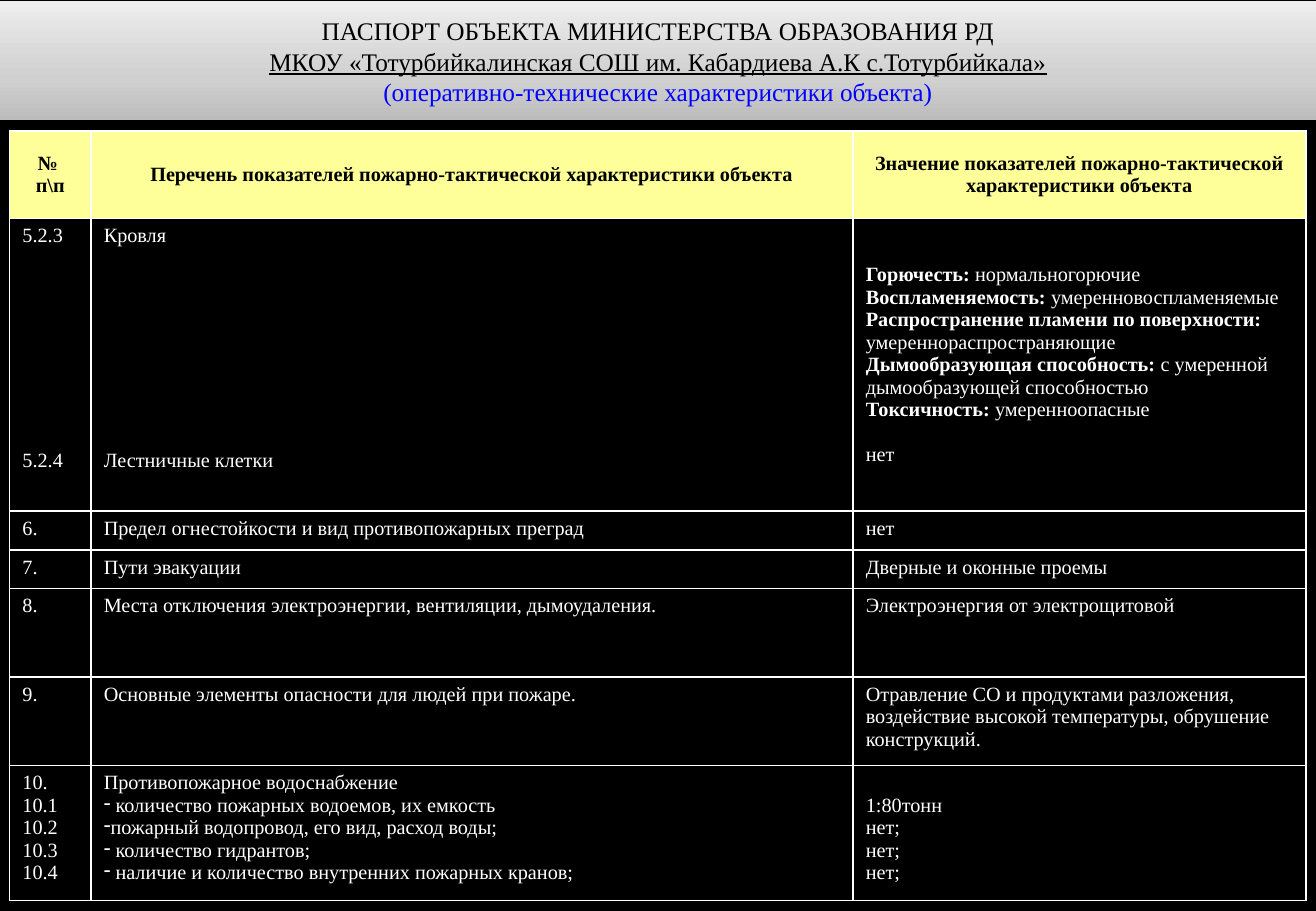
import copy
import dataclasses

import lxml.etree
import pptx
import pptx.dml.color
import pptx.enum.text
import pptx.oxml.ns
import pptx.util

Cm = pptx.util.Cm
Pt = pptx.util.Pt
Align = pptx.enum.text.PP_ALIGN
Anchor = pptx.enum.text.MSO_ANCHOR


@dataclasses.dataclass(frozen=True)
class Theme:
    """Colours, font and type sizes of the slide."""

    font: str = "Times New Roman"
    title_size: float = 15
    title_leading: float = 18
    table_size: float = 12
    table_leading: float = 13.3
    dark: str = "000000"
    light: str = "FFFFFF"
    accent: str = "0000FF"
    header: str = "FFFF99"
    banner: tuple = ((0, "BCBCBC"), (0.35, "D0D0D0"), (1, "EDEDED"))


@dataclasses.dataclass(frozen=True)
class Line:
    """One paragraph of a cell; gap counts the text lines left free above it."""

    text: str
    label: str = ""
    gap: int = 0
    bullet: bool = False


THEME = Theme()
COLUMN_WIDTHS = (1.7, 15.93, 9.47)
ROW_HEIGHTS = (1.83, 6.12, 0.81, 0.81, 1.85, 1.85, 2.82)
HEADINGS = (
    [Line("№ "), Line("п\\п")],
    [Line("Перечень показателей пожарно-тактической характеристики объекта")],
    [Line("Значение показателей пожарно-тактической характеристики объекта")],
)
ROWS = (
    (
        [Line("5.2.3"), Line("5.2.4", gap=9)],
        [Line("Кровля"), Line("Лестничные клетки", gap=9)],
        [
            Line("нормальногорючие", "Горючесть: "),
            Line("умеренновоспламеняемые", "Воспламеняемость: "),
            Line("", "Распространение пламени по поверхности:"),
            Line("умереннораспространяющие"),
            Line("с умеренной дымообразующей способностью", "Дымообразующая способность: "),
            Line("умеренноопасные", "Токсичность: "),
            Line("нет", gap=1),
        ],
    ),
    (
        [Line("6.")],
        [Line("Предел огнестойкости и вид противопожарных преград")],
        [Line("нет")],
    ),
    ([Line("7.")], [Line("Пути эвакуации")], [Line("Дверные и оконные проемы")]),
    (
        [Line("8.")],
        [Line("Места отключения электроэнергии, вентиляции, дымоудаления.")],
        [Line("Электроэнергия от электрощитовой")],
    ),
    (
        [Line("9.")],
        [Line("Основные элементы опасности для людей при пожаре.")],
        [Line("Отравление СО и продуктами разложения, воздействие высокой "
              "температуры, обрушение конструкций.")],
    ),
    (
        [Line(number) for number in ("10.", "10.1", "10.2", "10.3", "10.4")],
        [
            Line("Противопожарное водоснабжение"),
            Line(" количество пожарных водоемов, их емкость", bullet=True),
            Line("пожарный водопровод, его вид, расход воды;", bullet=True),
            Line(" количество гидрантов;", bullet=True),
            Line(" наличие и количество внутренних пожарных кранов;", bullet=True),
        ],
        [Line("1:80тонн", gap=1), Line("нет;"), Line("нет;"), Line("нет;")],
    ),
)


def rgb(value):
    """Return the colour object for a hexadecimal value."""
    return pptx.dml.color.RGBColor.from_string(value)


def add_text(para, text, *, size, color, bold=False, underline=False):
    """Append a formatted span to a paragraph."""
    span = para.add_run()
    span.text = text
    font = span.font
    font.name, font.size = THEME.font, Pt(size)
    font.bold, font.underline = bold, underline
    font.color.rgb = rgb(color)


def add_paragraph(frame, index):
    """Return the first paragraph of a frame, or a new one after it."""
    return frame.add_paragraph() if index else frame.paragraphs[0]


def add_dash(para):
    """Give a paragraph a dash as its bullet."""
    properties = para._p.get_or_add_pPr()
    properties.set("marL", "0")
    properties.set("indent", "0")
    bullet = lxml.etree.SubElement(properties, pptx.oxml.ns.qn("a:buChar"))
    bullet.set("char", "-")


def add_borders(cell):
    """Draw one-point light lines on all sides of a cell."""
    properties = cell._tc.get_or_add_tcPr()
    for side in ("a:lnL", "a:lnR", "a:lnT", "a:lnB"):
        line = lxml.etree.SubElement(properties, pptx.oxml.ns.qn(side), w=str(Pt(1)))
        fill = lxml.etree.SubElement(line, pptx.oxml.ns.qn("a:solidFill"))
        lxml.etree.SubElement(fill, pptx.oxml.ns.qn("a:srgbClr"), val=THEME.light)


def fill_cell(cell, lines, *, heading=False, anchor=Anchor.TOP):
    """Write lines into a cell and set its fill, borders and margins."""
    add_borders(cell)
    cell.fill.solid()
    cell.fill.fore_color.rgb = rgb(THEME.header if heading else THEME.dark)
    cell.vertical_anchor = anchor
    cell.margin_left = cell.margin_right = Cm(0.27)
    cell.margin_top = Cm(0.13) + Pt(lines[0].gap * THEME.table_leading)
    cell.margin_bottom = Cm(0.13)
    style = {"size": THEME.table_size, "color": THEME.dark if heading else THEME.light}
    for index, line in enumerate(lines):
        para = add_paragraph(cell.text_frame, index)
        para.alignment = Align.CENTER if heading else Align.LEFT
        if index and line.gap:
            para.space_before = Pt(line.gap * THEME.table_leading)
        if line.bullet:
            add_dash(para)
        if line.label:
            add_text(para, line.label, bold=True, **style)
        if line.text:
            add_text(para, line.text, bold=heading, **style)


def add_banner(page, left, top, width, height):
    """Place the title on its grey gradient band."""
    title = page.shapes.title
    title.left, title.top, title.width, title.height = left, top, width, height
    title.fill.gradient()
    title.fill.gradient_angle = 90
    stops = title._element.xpath(".//a:gsLst")[0]
    stops.append(copy.deepcopy(stops[0]))
    for stop, (position, color) in zip(title.fill.gradient_stops, THEME.banner):
        stop.position = position
        stop.color.rgb = rgb(color)
    frame = title.text_frame
    frame.word_wrap = True
    frame.auto_size = pptx.enum.text.MSO_AUTO_SIZE.NONE
    frame.vertical_anchor = Anchor.MIDDLE
    lines = (
        ("ПАСПОРТ ОБЪЕКТА МИНИСТЕРСТВА ОБРАЗОВАНИЯ РД", THEME.dark, False),
        ("МКОУ «Тотурбийкалинская СОШ им. Кабардиева А.К с.Тотурбийкала»", THEME.dark, True),
        ("(оперативно-технические характеристики объекта)", THEME.accent, False),
    )
    for index, (text, color, underline) in enumerate(lines):
        para = add_paragraph(frame, index)
        para.alignment = Align.CENTER
        para.line_spacing = Pt(THEME.title_leading)
        add_text(para, text, size=THEME.title_size, color=color, underline=underline)


def add_passport_table(page, left, top, width, height):
    """Place the table of fire-safety indicators."""
    table = page.shapes.add_table(
        len(ROW_HEIGHTS), len(COLUMN_WIDTHS), left, top, width, height).table
    table.horz_banding = False
    for column, size in zip(table.columns, COLUMN_WIDTHS):
        column.width = Cm(size)
    for row, size in zip(table.rows, ROW_HEIGHTS):
        row.height = Cm(size)
    for row_index, cells in enumerate((HEADINGS, *ROWS)):
        for column_index, lines in enumerate(cells):
            heading = row_index == 0
            centred = heading or any(line.label for line in lines)
            fill_cell(table.cell(row_index, column_index), lines, heading=heading,
                      anchor=Anchor.MIDDLE if centred else Anchor.TOP)


def main():
    """Build the slide and save it."""
    deck = pptx.Presentation()
    deck.slide_width, deck.slide_height = Cm(27.51), Cm(19.05)
    page = deck.slides.add_slide(deck.slide_layouts[5])
    page.background.fill.solid()
    page.background.fill.fore_color.rgb = rgb(THEME.dark)
    add_banner(page, 0, Cm(0.03), deck.slide_width, Cm(2.49))
    add_passport_table(page, Cm(0.2), Cm(2.74), Cm(sum(COLUMN_WIDTHS)), Cm(sum(ROW_HEIGHTS)))
    deck.save("out.pptx")


if __name__ == "__main__":
    main()
